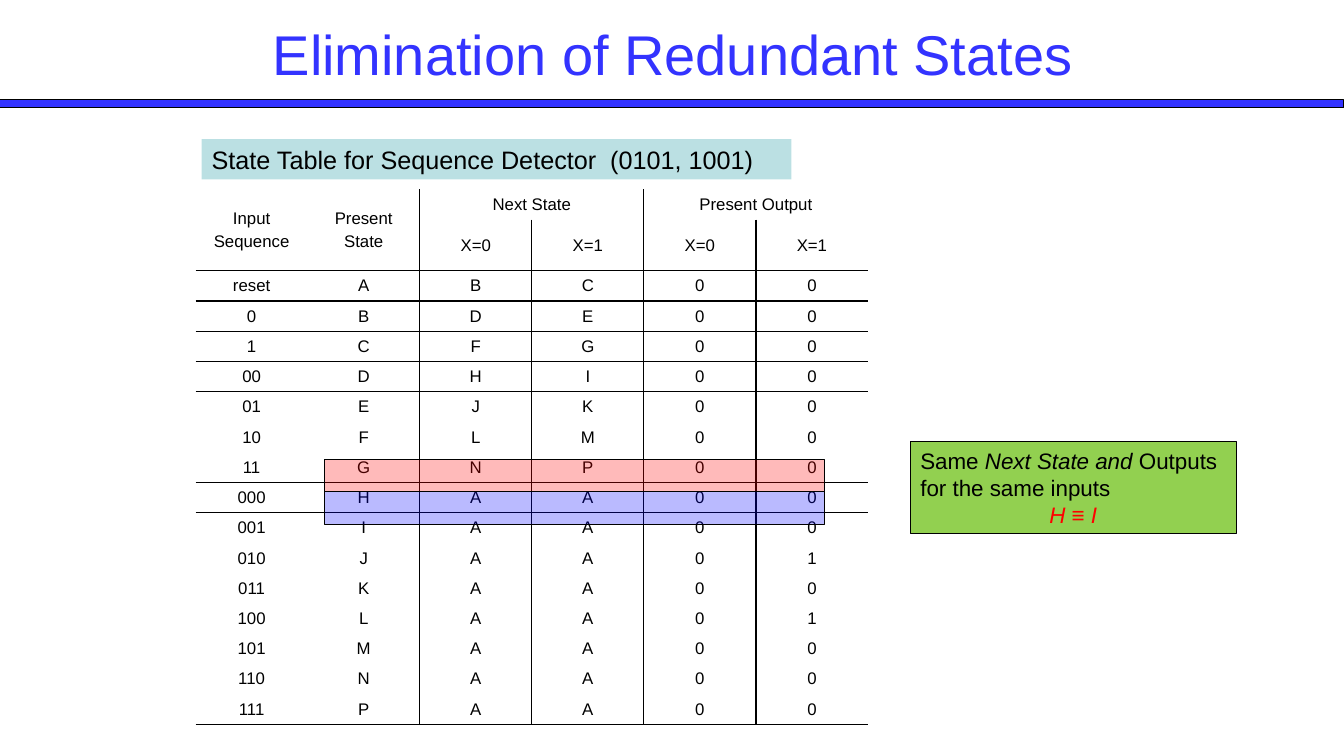
import pptx
import pptx.util
import pptx.dml.color
import pptx.enum.shapes
import pptx.enum.text
import lxml.etree

Inches = pptx.util.Inches
Pt = pptx.util.Pt
RGBColor = pptx.dml.color.RGBColor
ALIGN = pptx.enum.text.PP_ALIGN
MIDDLE = pptx.enum.text.MSO_ANCHOR.MIDDLE
qn = pptx.oxml.ns.qn

BLACK = RGBColor(0, 0, 0)
INDIGO = RGBColor(0x33, 0x33, 0xFF)
AQUA = RGBColor(0xBB, 0xE0, 0xE3)
GREEN = RGBColor(0x92, 0xD0, 0x50)
RED = RGBColor(0xFF, 0, 0)
BLUE = RGBColor(0, 0, 0xFF)
PLAIN_STYLE = "{2D5ABB26-0587-4C30-8999-92F81FD0307C}"

HEAD = [
    ["Input\nSequence", "Present\nState", "Next State", "", "Present Output", ""],
    ["", "", "X=0", "X=1", "X=0", "X=1"],
]
STATES = """
reset A B C 0 0
0 B D E 0 0
1 C F G 0 0
00 D H I 0 0
01 E J K 0 0
10 F L M 0 0
11 G N P 0 0
000 H A A 0 0
001 I A A 0 0
010 J A A 0 1
011 K A A 0 0
100 L A A 0 1
101 M A A 0 0
110 N A A 0 0
111 P A A 0 0
"""
MERGES = [((0, 0), (1, 0)), ((0, 1), (1, 1)), ((0, 2), (0, 3)), ((0, 4), (0, 5))]
RULED_ROWS = {1, 2, 4, 8, 16}  # rows with a line below
RULED_COLS = {1, 3}  # columns with a line to the right


def set_font(item, size, color=BLACK):
    item.font.name = "Arial"
    item.font.size = Pt(size)
    item.font.color.rgb = color


def add_box(slide, box, fill, line=True, alpha=None):
    left, top, width, height = map(Inches, box)
    shape = slide.shapes.add_shape(
        pptx.enum.shapes.MSO_SHAPE.RECTANGLE, left, top, width, height)
    shape.shadow.inherit = False
    shape.fill.solid()
    shape.fill.fore_color.rgb = fill
    if alpha is not None:
        color = shape.fill._xPr.find(qn("a:solidFill"))[0]
        lxml.etree.SubElement(color, qn("a:alpha"), val=str(alpha * 1000))
    if line:
        shape.line.color.rgb = BLACK
        shape.line.width = Pt(0.75)
    else:
        shape.line.fill.background()
    return shape


def add_title(slide, box):
    title = slide.shapes.title
    title.left, title.top, title.width, title.height = map(Inches, box)
    frame = title.text_frame
    frame.text = "Elimination of Redundant States"
    frame.vertical_anchor = MIDDLE
    frame.paragraphs[0].alignment = ALIGN.CENTER
    set_font(frame.paragraphs[0], 40, INDIGO)


def add_label(slide, box):
    frame = add_box(slide, box, AQUA, line=False).text_frame
    frame.word_wrap = True
    frame.text = "State Table for Sequence Detector  (0101, 1001)"
    frame.paragraphs[0].alignment = ALIGN.LEFT
    set_font(frame.paragraphs[0], 18)


def add_edge(cell, tag):
    edge = lxml.etree.SubElement(
        cell._tc.get_or_add_tcPr(), qn(tag), w=str(Pt(1)))
    fill = lxml.etree.SubElement(edge, qn("a:solidFill"))
    lxml.etree.SubElement(fill, qn("a:srgbClr"), val=str(BLACK))


def fill_cell(cell, text):
    cell.text = text
    cell.vertical_anchor = MIDDLE
    for para in cell.text_frame.paragraphs:
        space = lxml.etree.SubElement(para._p.get_or_add_pPr(), qn("a:spcBef"))
        lxml.etree.SubElement(space, qn("a:spcPct"), val="20000")
        para.alignment = ALIGN.CENTER
        set_font(para, 12)


def add_states(slide, box):
    rows = HEAD + [line.split() for line in STATES.strip().splitlines()]
    left, top, width, height = map(Inches, box)
    frame = slide.shapes.add_table(
        len(rows), len(rows[0]), left, top, width, height)
    table = frame.table
    props = table._tbl.tblPr
    props.find(qn("a:tableStyleId")).text = PLAIN_STYLE
    table.first_row = table.horz_banding = False
    for r, row in enumerate(rows):
        for c, text in enumerate(row):
            cell = table.cell(r, c)
            fill_cell(cell, text)
            edges = {
                "a:lnL": c - 1 in RULED_COLS,
                "a:lnR": c in RULED_COLS,
                "a:lnT": r - 1 in RULED_ROWS,
                "a:lnB": r in RULED_ROWS,
            }
            for tag, ruled in edges.items():
                if ruled:
                    add_edge(cell, tag)
            cell.fill.background()
    for first, last in MERGES:
        table.cell(*first).merge(table.cell(*last))


def add_marks(slide, box):
    """Tint two rows, one below the other, each half the height of the box."""
    left, top, width, height = box
    for i, color in enumerate([RED, BLUE]):
        add_box(slide, (left, top + i * height / 2, width, height / 2),
                color, alpha=27)


def add_note(slide, box):
    frame = add_box(slide, box, GREEN).text_frame
    frame.word_wrap = True
    lines = [
        (ALIGN.LEFT, BLACK, [("Same ", False), ("Next State and ", True), ("Outputs", False)]),
        (ALIGN.LEFT, BLACK, [("for the same inputs", False)]),
        (ALIGN.CENTER, RED, [("H ≡ I", True)]),
    ]
    for i, (align, color, parts) in enumerate(lines):
        para = frame.add_paragraph() if i else frame.paragraphs[0]
        para.alignment = align
        set_font(para, 16, color)
        for text, slant in parts:
            run = para.add_run()
            run.text = text
            run.font.italic = slant


def main():
    deck = pptx.Presentation()
    deck.slide_width = Inches(13.33)
    deck.slide_height = Inches(7.5)
    slide = deck.slides.add_slide(deck.slide_layouts[5])
    add_box(slide, (0, 0.99, 13.33, 0.08), INDIGO)
    add_label(slide, (2, 1.38, 5.85, 0.4))
    add_states(slide, (1.94, 1.88, 6.67, 5.1))
    add_marks(slide, (3.22, 4.56, 4.96, 0.64))
    add_note(slide, (9.03, 4.38, 3.23, 0.91))
    add_title(slide, (1.92, 0.13, 9.5, 0.79))
    deck.save("out.pptx")


if __name__ == "__main__":
    main()
